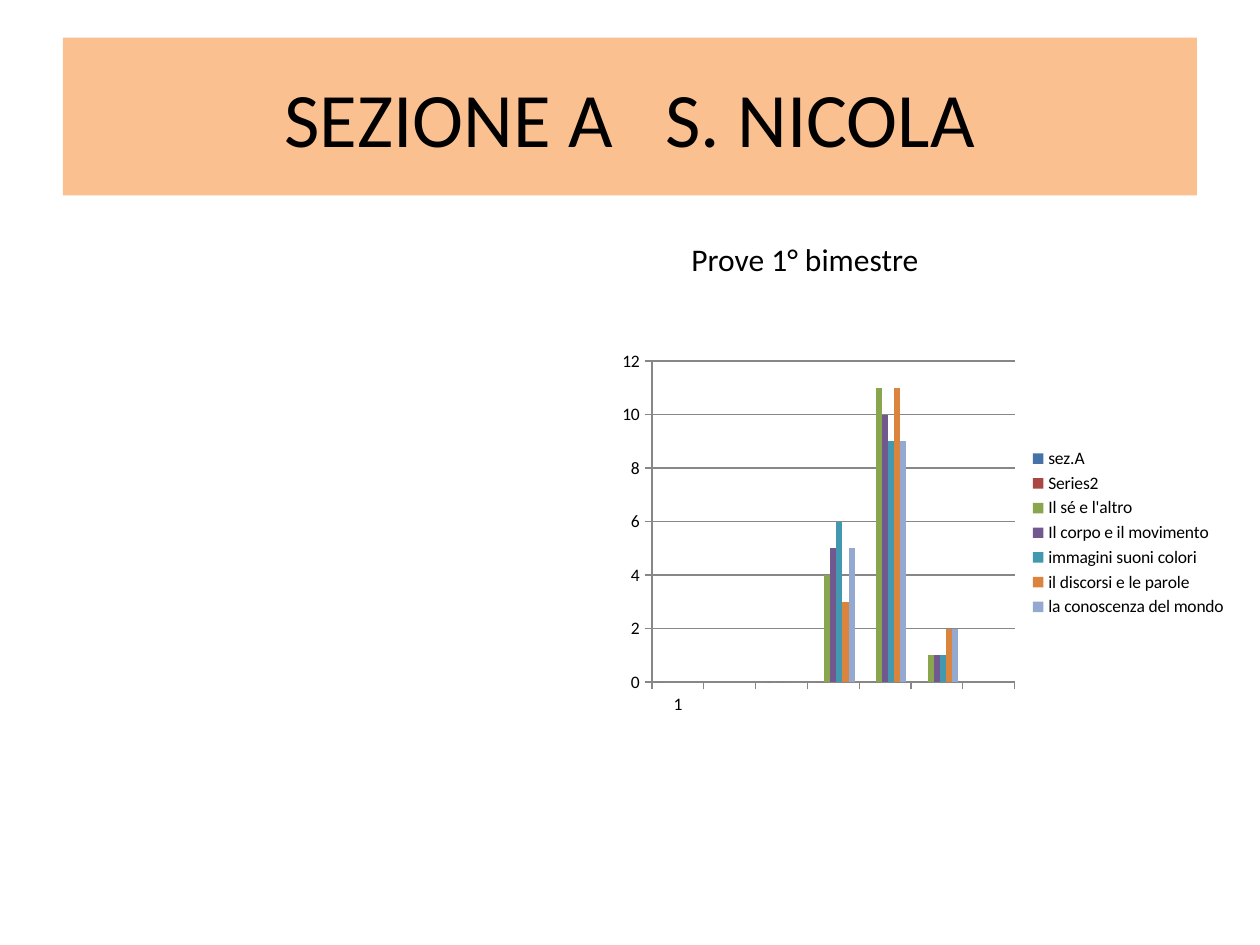
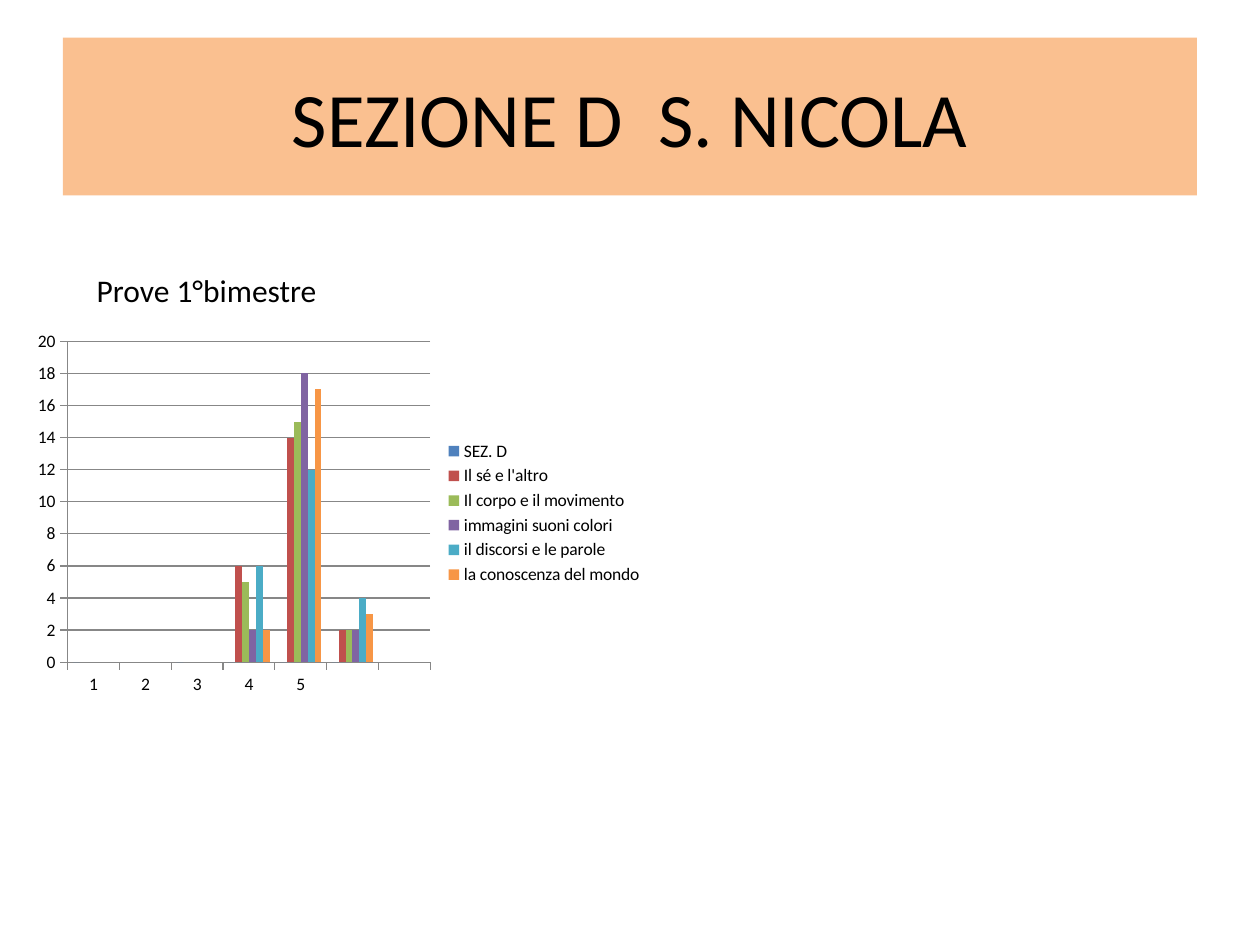
from pptx import Presentation
from pptx.chart.data import CategoryChartData
from pptx.dml.color import RGBColor
from pptx.enum.chart import XL_CHART_TYPE as ChartType, XL_LEGEND_POSITION as LegendPos, XL_TICK_MARK as Tick
from pptx.enum.shapes import MSO_SHAPE as Shape
from pptx.enum.text import MSO_ANCHOR as Anchor, MSO_AUTO_SIZE as AutoSize, PP_ALIGN as Align
from pptx.util import Cm, Pt

FONT = "Calibri"
BLACK = RGBColor(0x00, 0x00, 0x00)
PEACH = RGBColor(0xFA, 0xC0, 0x90)
GREY = RGBColor(0x87, 0x87, 0x87)
MUTED = [RGBColor.from_string(c) for c in
         ("4572A7", "AA4643", "89A54E", "71588F", "4198AF", "DB843D", "93A9CF")]
BRIGHT = [RGBColor.from_string(c) for c in
          ("4F81BD", "C0504D", "9BBB59", "8064A2", "4BACC6", "F79646")]
SPACE_PT = 9.95  # width of one space at 44 pt

# Each subject holds its scores for categories 4, 5 and 6
SECTIONS = [
    dict(title=("SEZIONE A", "S. NICOLA"), spaces=3,
         caption="Prove 1° bimestre", caption_at=(13.69, 4.72, 5.13, 1.02),
         chart_at=(12.29, 6.93), labels=["1"] + [""] * 6, colours=MUTED,
         first=[("sez.A", [0] + [None] * 6),
                ("Series2", [None, None, 0, 0, 0, 0, None])],
         before=[None, None, 0],
         scores=[(4, 11, 1), (5, 10, 1), (6, 9, 1), (3, 11, 2), (5, 9, 2)]),
    dict(title=("SEZIONE D", "S. NICOLA"), spaces=2,
         caption="Prove 1°bimestre", caption_at=(1.7, 5.33, 5, 1.02),
         chart_at=(0.51, 6.53), labels=["1", "2", "3", "4", "5", "", ""], colours=BRIGHT,
         first=[("SEZ. D", [0, None, 0, 0, 0, 0, None])],
         before=[None, None, None],
         scores=[(6, 14, 2), (5, 15, 2), (2, 18, 2), (6, 12, 4), (2, 17, 3)]),
]
SUBJECTS = ["Il sé e l'altro", "Il corpo e il movimento", "immagini suoni colori",
            "il discorsi e le parole", "la conoscenza del mondo"]


def set_font(font, size):
    font.name, font.size = FONT, Pt(size)
    font.color.rgb = BLACK


deck = Presentation()
deck.slide_width, deck.slide_height = Cm(25.4), Cm(19.05)

for section in SECTIONS:
    page = deck.slides.add_slide(deck.slide_layouts[6])

    # Title band
    band = page.shapes.add_shape(Shape.RECTANGLE, Cm(1.27), Cm(0.76), Cm(22.86), Cm(3.18))
    band.shadow.inherit = False
    band.fill.solid()
    band.fill.fore_color.rgb = PEACH
    band.line.fill.background()
    band.text_frame.word_wrap = True
    band.text_frame.vertical_anchor = Anchor.MIDDLE
    para = band.text_frame.paragraphs[0]
    para.alignment = Align.CENTER
    set_font(para.font, 44)
    name, place = section["title"]
    for text in (name, " ", place):
        span = para.add_run()
        span.text = text
        if text == " ":  # widen the gap by letter spacing
            extra = (section["spaces"] - 1) * SPACE_PT
            span.font._element.set("spc", str(round(extra * 100)))

    # Column chart
    data = CategoryChartData()
    data.categories = section["labels"]
    for series_name, values in section["first"]:
        data.add_series(series_name, values)
    for subject, scores in zip(SUBJECTS, section["scores"]):
        data.add_series(subject, section["before"] + list(scores) + [None])
    left, top = section["chart_at"]
    chart = page.shapes.add_chart(ChartType.COLUMN_CLUSTERED, Cm(left), Cm(top),
                                  Cm(12.7), Cm(7.62), data).chart
    set_font(chart.font, 10)
    chart.has_title = False
    chart.has_legend = True
    chart.legend.position = LegendPos.RIGHT
    chart.legend.include_in_layout = False
    plot = chart.plots[0]
    plot.vary_by_categories = False
    plot.gap_width, plot.overlap = 150, 0
    for series, colour in zip(plot.series, section["colours"]):
        series.format.fill.solid()
        series.format.fill.fore_color.rgb = colour
    chart.value_axis.has_major_gridlines = True
    lines = [chart.value_axis.major_gridlines.format.line]
    for axis in (chart.category_axis, chart.value_axis):
        axis.major_tick_mark = Tick.OUTSIDE
        axis.minor_tick_mark = Tick.NONE
        lines.append(axis.format.line)
    for line in lines:
        line.color.rgb = GREY
        line.width = Pt(0.75)

    # Chart caption
    box = page.shapes.add_textbox(*[Cm(n) for n in section["caption_at"]])
    box.text_frame.word_wrap = False
    box.text_frame.auto_size = AutoSize.SHAPE_TO_FIT_TEXT
    para = box.text_frame.paragraphs[0]
    para.text = section["caption"]
    set_font(para.font, 18)

deck.save("out.pptx")
